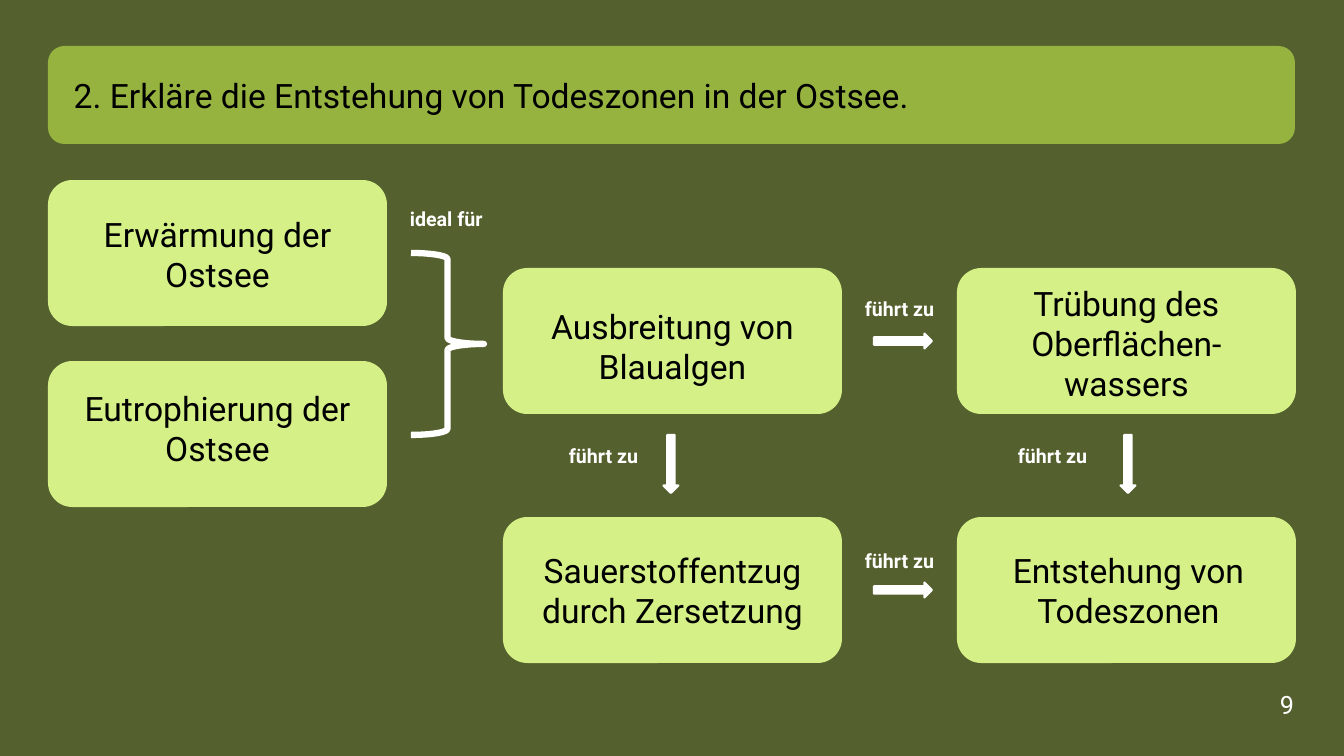
from pptx import Presentation
from pptx import util as u
from pptx.dml.color import RGBColor
from pptx.enum import shapes, text

DARK, BAND, BOX = "54612E", "96B340", "D5F086"
BLACK, WHITE = "000000", "FFFFFF"
FONT = "Roboto"
SHAPE = shapes.MSO_SHAPE
ALIGN = text.PP_ALIGN

TITLE = "2. Erkläre die Entstehung von Todeszonen in der Ostsee."
BOX_W, BOX_H = 339, 146
COLUMNS = (48, 503, 957)
CAUSE_ROWS = (180, 361)
EFFECT_ROWS = (268, 517)

# text, left, top, shift of the text right and down
BOXES = [
    ("Erwärmung der Ostsee", COLUMNS[0], CAUSE_ROWS[0], 0, 1),
    ("Eutrophierung der Ostsee", COLUMNS[0], CAUSE_ROWS[1], 0, -6),
    ("Ausbreitung von Blaualgen", COLUMNS[1], EFFECT_ROWS[0], 0, 5),
    ("Trübung des Oberflächen-wassers", COLUMNS[2], EFFECT_ROWS[0], 0, 2),
    ("Sauerstoffentzug durch Zersetzung", COLUMNS[1], EFFECT_ROWS[1], 0, 0),
    ("Entstehung von Todeszonen", COLUMNS[2], EFFECT_ROWS[1], 2, 0),
]

# text, left, top
LABELS = [
    ("ideal für", 400, 202),
    ("führt zu", 855, 292),
    ("führt zu", 855, 544),
    ("führt zu", 559, 439),
    ("führt zu", 1008, 439),
]

# preset, centre x, centre y, width, height
ARROW_LENGTH, ARROW_WIDTH = 58, 15
ARROWS = [
    (SHAPE.RIGHT_ARROW, 903, 341, ARROW_LENGTH, ARROW_WIDTH),
    (SHAPE.RIGHT_ARROW, 903, 590, ARROW_LENGTH, ARROW_WIDTH),
    (SHAPE.DOWN_ARROW, 671, 464, ARROW_WIDTH, ARROW_LENGTH),
    (SHAPE.DOWN_ARROW, 1128, 464, ARROW_WIDTH, ARROW_LENGTH),
]


def px(n):
    return u.Emu(round(n * 914400 / 100.8))


def rgb(value):
    return RGBColor.from_string(value)


def add_shape(preset, x, y, w, h, fill=None, line=None, weight=1.5):
    sp = s.shapes.add_shape(preset, px(x), px(y), px(w), px(h))
    sp.shadow.inherit = False
    if fill:
        sp.fill.solid()
        sp.fill.fore_color.rgb = rgb(fill)
    else:
        sp.fill.background()
    if line:
        sp.line.color.rgb = rgb(line)
        sp.line.width = u.Pt(weight)
    else:
        sp.line.fill.background()
    return sp


def write(tf, words, size, color, align, bold=False):
    tf.word_wrap = True
    p = tf.paragraphs[0]
    p.alignment = align
    r = p.add_run()
    r.text = words
    r.font.name, r.font.size, r.font.bold = FONT, u.Pt(size), bold
    r.font.color.rgb = rgb(color)


def add_text(words, x, y, w, h, size, align, bold=False):
    tb = s.shapes.add_textbox(px(x), px(y), px(w), px(h))
    write(tb.text_frame, words, size, WHITE, align, bold)


prs = Presentation()
prs.slide_width, prs.slide_height = px(1344), px(756)
s = prs.slides.add_slide(prs.slide_layouts[6])
s.background.fill.solid()
s.background.fill.fore_color.rgb = rgb(DARK)

# Title band
band = add_shape(SHAPE.ROUNDED_RECTANGLE, 48, 46, 1247, 98, BAND)
band.text_frame.margin_left = px(21)
write(band.text_frame, TITLE, 24, BLACK, ALIGN.LEFT)

# Boxes of the causal chain; uneven margins shift their text
for words, x, y, dx, dy in BOXES:
    tf = add_shape(SHAPE.ROUNDED_RECTANGLE, x, y, BOX_W, BOX_H, BOX).text_frame
    tf.margin_left, tf.margin_right = px(10 + dx), px(10 - dx)
    tf.margin_top, tf.margin_bottom = px(max(2 * dy, 0)), px(max(-2 * dy, 0))
    write(tf, words, 24, BLACK, ALIGN.CENTER)

# Brace and arrows
add_shape(SHAPE.RIGHT_BRACE, 411, 253, 73, 182, line=WHITE, weight=4.5)
for preset, cx, cy, w, h in ARROWS:
    add_shape(preset, cx - w / 2, cy - h / 2, w, h, WHITE, WHITE)

# Arrow labels and page number
for words, x, y in LABELS:
    add_text(words, x, y, 112, 34, 14, ALIGN.LEFT, bold=True)
add_text("9", 1256, 684, 48, 41, 18, ALIGN.RIGHT)

prs.save("out.pptx")
